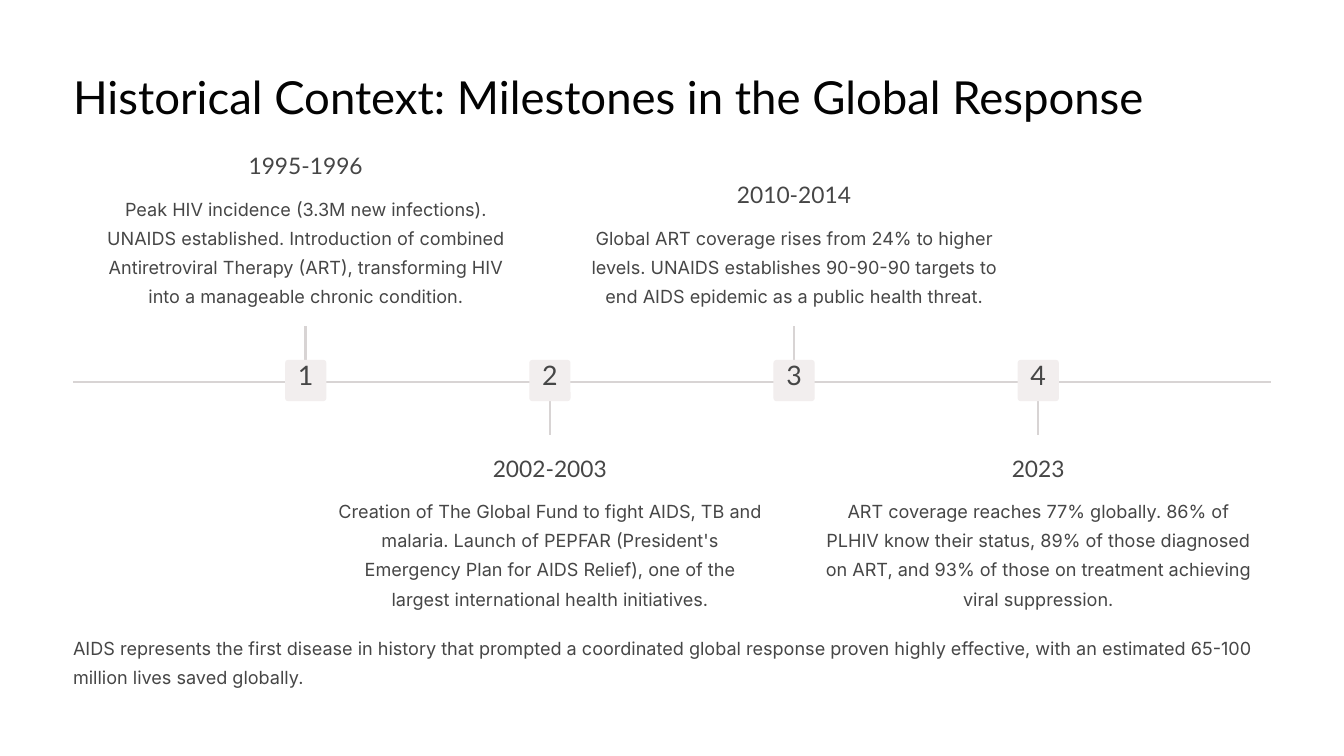
from pptx import Presentation
from pptx.dml.color import RGBColor
from pptx.enum.shapes import MSO_CONNECTOR, MSO_SHAPE
from pptx.enum.text import MSO_ANCHOR, MSO_AUTO_SIZE, PP_ALIGN
from pptx.oxml.ns import qn
from pptx.util import Inches, Pt
from lxml import etree

TITLE = "Historical Context: Milestones in the Global Response"
MILESTONES = [
    ("1995-1996", "Peak HIV incidence (3.3M new infections). UNAIDS established. Introduction of combined "
     "Antiretroviral Therapy (ART), transforming HIV into a manageable chronic condition.", 4),
    ("2002-2003", "Creation of The Global Fund to fight AIDS, TB and malaria. Launch of PEPFAR (President's "
     "Emergency Plan for AIDS Relief), one of the largest international health initiatives.", 4),
    ("2010-2014", "Global ART coverage rises from 24% to higher levels. UNAIDS establishes 90-90-90 targets to "
     "end AIDS epidemic as a public health threat.", 3),
    ("2023", "ART coverage reaches 77% globally. 86% of PLHIV know their status, 89% of those diagnosed on ART, "
     "and 93% of those on treatment achieving viral suppression.", 4),
]
SUMMARY = ("AIDS represents the first disease in history that prompted a coordinated global response proven "
           "highly effective, with an estimated 65-100 million lives saved globally.")

WHITE = RGBColor(0xFF, 0xFF, 0xFF)
BLACK = RGBColor(0x03, 0x03, 0x03)
GREY = RGBColor(0x46, 0x46, 0x46)
LINE = RGBColor(0xD8, 0xD4, 0xD4)
BADGE = RGBColor(0xF2, 0xEE, 0xEE)

TITLE_FONT = dict(name="Lato", size=Pt(39), color=BLACK, spacing=Pt(48.5))
NUMBER_FONT = dict(name="Lato", size=Pt(23), color=GREY, spacing=Pt(23))
YEAR_FONT = dict(name="Lato", size=Pt(19.5), color=GREY, spacing=Pt(24))
BODY_FONT = dict(name="Inter", size=Pt(15.5), color=GREY, spacing=Pt(25))

WIDTH, HEIGHT, MARGIN = 16, 9, 0.87
FIRST, LAST = 3.64, 12.36
PITCH = (LAST - FIRST) / (len(MILESTONES) - 1)
AXIS, BADGE_SIZE, STEM, LINE_W = 4.53, 0.49, 0.65, 0.03
YEAR_W, YEAR_H, YEAR_STEP = 2.71, 0.34, 0.47
BODY_W, ROW = 5.11, 25 / 72
ABOVE_END, BELOW_START = 3.66, 5.4


def write(sp, text, style, align=PP_ALIGN.LEFT, top=0):
    tf = sp.text_frame
    settings = dict(margin_left=0, margin_right=0, margin_top=Inches(top), margin_bottom=0,
                    word_wrap=True, auto_size=MSO_AUTO_SIZE.NONE, vertical_anchor=MSO_ANCHOR.TOP)
    for key, value in settings.items():
        setattr(tf, key, value)
    p = tf.paragraphs[0]
    p.alignment, p.line_spacing = align, style["spacing"]
    r = p.add_run()
    r.text = text
    for key in ("name", "size"):
        setattr(r.font, key, style[key])
    r.font.color.rgb = style["color"]


def add_text(slide, box, text, style, align=PP_ALIGN.LEFT):
    write(slide.shapes.add_textbox(*map(Inches, box)), text, style, align)


def add_line(slide, x1, y1, x2, y2):
    line = slide.shapes.add_connector(MSO_CONNECTOR.STRAIGHT, *map(Inches, (x1, y1, x2, y2)))
    line.line.color.rgb, line.line.width = LINE, Inches(LINE_W)
    etree.SubElement(line._element.spPr, qn("a:effectLst"))


def add_badge(slide, x, number):
    half = BADGE_SIZE / 2
    sp = slide.shapes.add_shape(MSO_SHAPE.ROUNDED_RECTANGLE,
                                *map(Inches, (x - half, AXIS - half, BADGE_SIZE, BADGE_SIZE)))
    sp.adjustments[0] = 0.07
    sp.shadow.inherit = False
    sp.fill.solid()
    sp.fill.fore_color.rgb = BADGE
    sp.line.fill.background()
    write(sp, str(number), NUMBER_FONT, PP_ALIGN.CENTER, top=0.04)


def add_milestone(slide, i, year, body, rows):
    x, above = FIRST + i * PITCH, i % 2 == 0
    add_line(slide, x, AXIS, x, AXIS - STEM if above else AXIS + STEM)
    add_badge(slide, x, i + 1)
    body_h = rows * ROW
    body_y = ABOVE_END - body_h if above else BELOW_START + YEAR_STEP
    add_text(slide, (x - YEAR_W / 2, body_y - YEAR_STEP, YEAR_W, YEAR_H), year, YEAR_FONT, PP_ALIGN.CENTER)
    add_text(slide, (x - BODY_W / 2, body_y, BODY_W, body_h), body, BODY_FONT, PP_ALIGN.CENTER)


def main():
    prs = Presentation()
    prs.slide_width, prs.slide_height = Inches(WIDTH), Inches(HEIGHT)
    slide = prs.slides.add_slide(prs.slide_layouts[5])
    slide.background.fill.solid()
    slide.background.fill.fore_color.rgb = WHITE

    title = slide.shapes.title
    box = dict(left=MARGIN, top=0.8, width=13.91, height=0.68)
    for key, value in box.items():
        setattr(title, key, Inches(value))
    write(title, TITLE, TITLE_FONT)

    axis_y = AXIS + LINE_W / 2
    add_line(slide, MARGIN, axis_y, WIDTH - MARGIN, axis_y)
    for i, milestone in enumerate(MILESTONES):
        add_milestone(slide, i, *milestone)
    add_text(slide, (MARGIN, 7.5, WIDTH - 2 * MARGIN, 2 * ROW), SUMMARY, BODY_FONT)
    prs.save("out.pptx")


if __name__ == "__main__":
    main()
